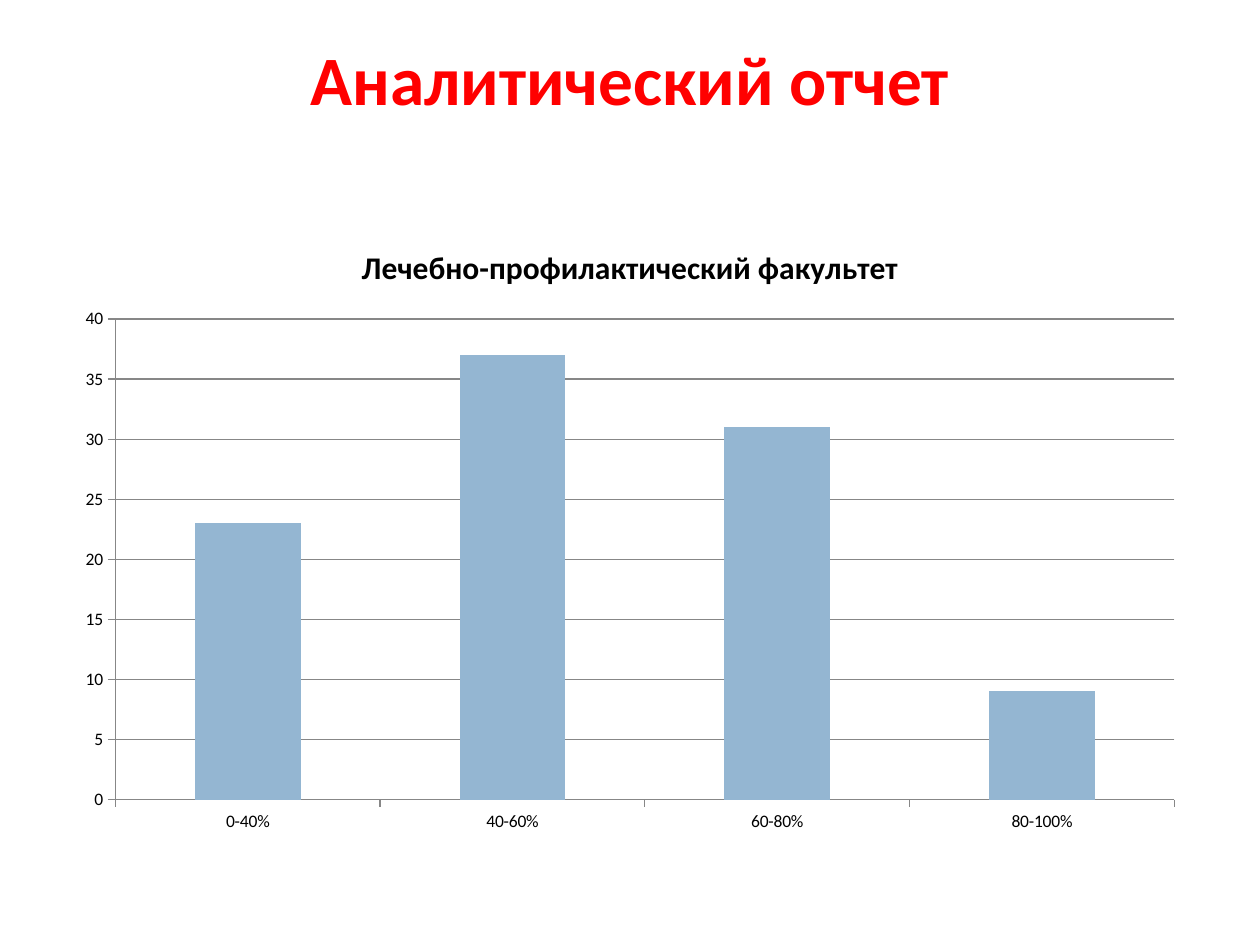
from pptx import Presentation
from pptx.chart.data import CategoryChartData
from pptx.dml.color import RGBColor
from pptx.enum.chart import XL_CHART_TYPE as ChartType, XL_TICK_MARK as TickMark
from pptx.enum.text import MSO_ANCHOR as Anchor, PP_ALIGN as Align
from pptx.util import Inches, Pt


def color(value):
    return RGBColor.from_string(value)


def style(font, size, bold, value):
    formats = {"name": "Calibri", "size": Pt(size), "bold": bold}
    for name, setting in formats.items():
        setattr(font, name, setting)
    font.color.rgb = color(value)


deck = Presentation()
deck.slide_width, deck.slide_height = Inches(10), Inches(7.5)
page = deck.slides.add_slide(deck.slide_layouts[6])

box = page.shapes.add_textbox(Inches(0.5), Inches(0.3), Inches(9), Inches(0.64))
frame = box.text_frame
frame_formats = {
    "word_wrap": True,
    "vertical_anchor": Anchor.MIDDLE,
    "margin_top": 0,
    "margin_bottom": 0,
}
for name, setting in frame_formats.items():
    setattr(frame, name, setting)
para = frame.paragraphs[0]
para.alignment = Align.CENTER
span = para.add_run()
span.text = "Аналитический отчет"
style(span.font, 39.6, True, "FF0000")

faculty = "Лечебно-профилактический факультет"
data = CategoryChartData()
data.categories = ["0-40%", "40-60%", "60-80%", "80-100%"]
data.add_series(faculty, [23, 37, 31, 9])
chart = page.shapes.add_chart(
    ChartType.COLUMN_CLUSTERED,
    Inches(0.5), Inches(1.75), Inches(9), Inches(4.95), data,
).chart
style(chart.font, 10, False, "000000")
chart.has_legend = False
chart.has_title = True
heading = chart.chart_title.text_frame.paragraphs[0].add_run()
heading.text = faculty
style(heading.font, 18, True, "000000")

plot = chart.plots[0]
plot.vary_by_categories = False
plot.gap_width = 150
fill = plot.series[0].format.fill
fill.solid()
fill.fore_color.rgb = color("94B6D2")

values = chart.value_axis
value_formats = {
    "minimum_scale": 0,
    "maximum_scale": 40,
    "major_unit": 5,
    "has_major_gridlines": True,
}
for name, setting in value_formats.items():
    setattr(values, name, setting)
for axis in (chart.category_axis, values):
    axis.major_tick_mark = TickMark.OUTSIDE
    axis.minor_tick_mark = TickMark.NONE
for part in (chart.category_axis, values, values.major_gridlines):
    part.format.line.color.rgb = color("878787")
    part.format.line.width = Pt(0.75)

deck.save("out.pptx")
